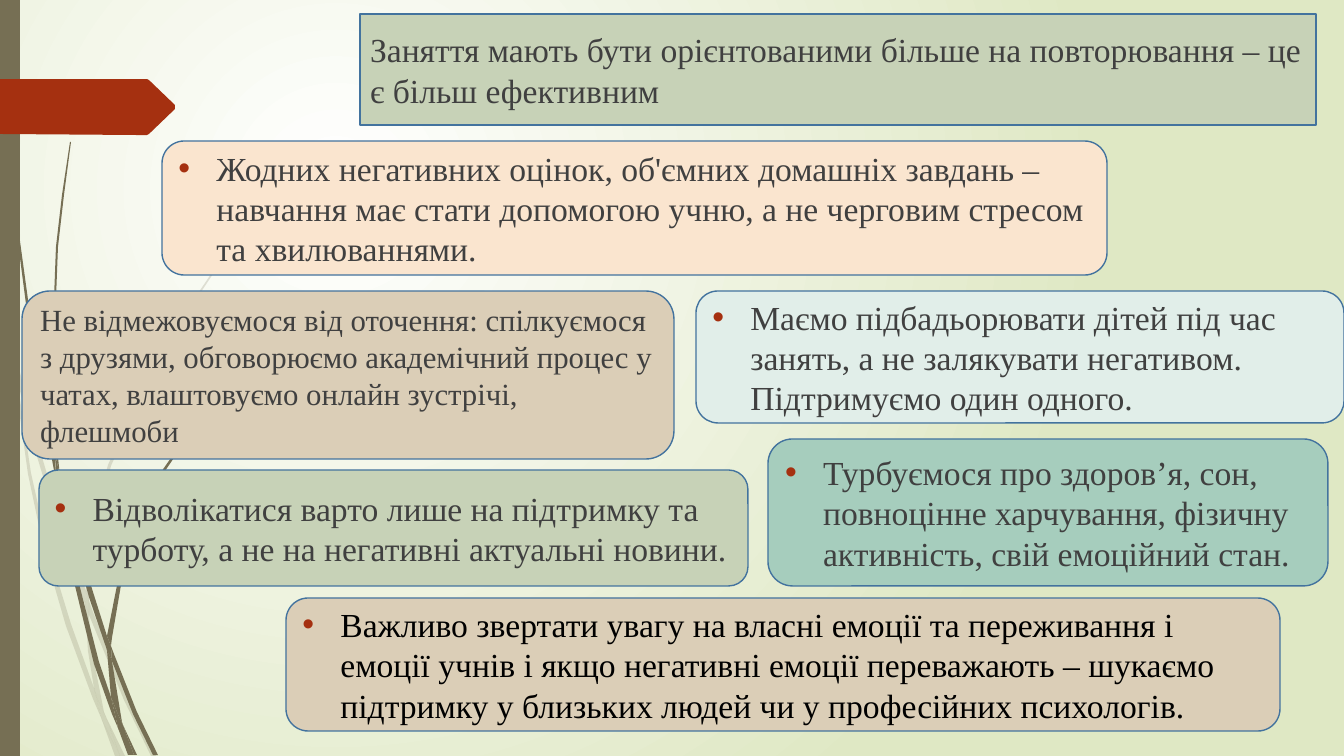
import lxml.etree
import pptx
import pptx.dml.color
import pptx.enum.dml
import pptx.enum.shapes
import pptx.enum.text
import pptx.oxml.ns
import pptx.util

SCALE = 12192000 / 1344
WIDTH, HEIGHT = 1344, 756
qn = pptx.oxml.ns.qn

PALE_WISPS = [
    [(11, 353), (9, 325), (0, 284), (0, 301), (10, 347)],
    [(58, 526), (85, 604), (86, 591), (62, 524), (36, 437), (14, 348), (17, 379), (36, 453)],
    [(93, 612), (89, 601), (89, 615), (124, 700), (151, 756), (156, 756), (128, 698)],
    [(120, 756), (125, 756), (106, 717)],
    [(94, 688), (71, 624), (48, 549), (31, 473), (17, 379), (11, 353), (28, 474),
     (44, 550), (66, 626), (93, 699), (102, 720), (100, 713)],
    [(85, 604), (88, 651), (94, 688), (97, 698), (106, 717), (104, 712), (92, 651),
     (89, 615), (89, 613)],
    [(89, 589), (96, 526), (111, 466), (161, 352), (231, 247), (270, 200), (292, 176),
     (314, 155), (314, 154), (291, 176), (270, 199), (230, 246), (159, 351), (108, 465),
     (92, 526), (86, 589), (86, 591), (89, 601)],
    [(102, 720), (115, 756), (120, 756)],
    [(89, 613), (89, 615), (89, 601), (86, 591), (85, 604)],
    [(97, 698), (94, 688), (100, 713), (102, 720), (120, 756), (106, 717)],
]
DARK_WISPS = [
    [(7, 111), (17, 235), (33, 358), (56, 481), (57, 485), (55, 461), (55, 457),
     (36, 358), (19, 234), (8, 110), (5, 48), (4, 0), (3, 0), (4, 48)],
    [(89, 597), (107, 650), (107, 638), (107, 636), (94, 595), (76, 537), (60, 476), (65, 509)],
    [(114, 654), (111, 646), (112, 661), (133, 714), (153, 755), (158, 755), (137, 712)],
    [(111, 697), (99, 662), (73, 560), (65, 509), (57, 481), (69, 561), (94, 664),
     (112, 714), (118, 728), (117, 723)],
    [(60, 476), (58, 457), (54, 352), (58, 247), (64, 195), (71, 142), (70, 142),
     (62, 195), (56, 247), (52, 352), (55, 453)],
    [(134, 755), (137, 755), (123, 725)],
    [(57, 481), (65, 509), (60, 476), (55, 453), (55, 457)],
    [(112, 638), (126, 556), (159, 480), (207, 409), (233, 377), (247, 362), (263, 347),
     (262, 347), (247, 361), (233, 376), (206, 408), (157, 478), (123, 555), (107, 636),
     (111, 646)],
    [(118, 728), (128, 755), (132, 755)],
    [(107, 650), (111, 697), (117, 712), (123, 725), (122, 722), (112, 661), (110, 656)],
    [(107, 650), (110, 656), (112, 661), (111, 646), (107, 636), (107, 638)],
    [(117, 712), (111, 697), (117, 723), (118, 728), (131, 755), (134, 755), (123, 725)],
]
TAG = [(175, 109), (149, 134), (147, 135), (137, 135), (0, 134), (0, 79), (147, 79),
       (149, 80), (175, 105)]

TITLE = "Заняття мають бути орієнтованими більше на повторювання – це є більш ефективним"
CARDS = [
    ((39, 470, 709, 116), "C7D2B7", {},
     "Відволікатися варто лише на підтримку та турботу, а не на негативні актуальні новини."),
    ((162, 141, 945, 134), "FAE5CF", {},
     "Жодних негативних оцінок, об'ємних домашніх завдань – навчання має стати допомогою "
     "учню, а не черговим стресом та хвилюваннями."),
    ((696, 291, 648, 132), "E1EEE9", {},
     "Маємо підбадьорювати дітей під час занять, а не залякувати негативом. "
     "Підтримуємо один одного."),
    ((286, 598, 994, 133), "DBCEB7", {"ink": "000000"},
     "Важливо звертати увагу на власні емоції та переживання і емоції учнів і якщо негативні "
     "емоції переважають – шукаємо підтримку у близьких людей чи у професійних психологів."),
    ((22, 291, 652, 168), "DBCEB7", {"size": 22, "bullet": False},
     "Не відмежовуємося від оточення: спілкуємося з друзями, обговорюємо академічний процес "
     "у чатах, влаштовуємо онлайн зустрічі, флешмоби"),
    ((768, 439, 560, 147), "A6CDBD", {},
     "Турбуємося про здоров’я, сон, повноцінне харчування, фізичну активність, "
     "свій емоційний стан."),
]


def px(value):
    return pptx.util.Emu(round(value * SCALE))


def colour(text):
    return pptx.dml.color.RGBColor.from_string(text)


def apply(target, values):
    for name, value in values.items():
        setattr(target, name, value)


class SlideBuilder:
    font = "Times New Roman"
    olive = "766F54"
    accent = "A53010"
    outline = "43739E"

    def __init__(self, page):
        self.page = page

    def background(self, inner, outer):
        fill = self.page.background.fill
        fill.gradient()
        for stop, position, shade in zip(fill.gradient_stops, (0, 1), (inner, outer)):
            apply(stop, {"position": position})
            stop.color.rgb = colour(shade)
        gradient = next(self.page._element.iter(qn("a:gradFill")))
        gradient.remove(gradient.find(qn("a:lin")))
        circle = lxml.etree.SubElement(gradient, qn("a:path"), path="circle")
        lxml.etree.SubElement(circle, qn("a:fillToRect"),
                              l="50000", t="50000", r="100000", b="100000")

    def paint(self, shape, fill, line=None):
        shape.fill.solid()
        shape.fill.fore_color.rgb = colour(fill)
        if line:
            shape.line.color.rgb = colour(line)
            shape.line.width = pptx.util.Pt(1)
        else:
            shape.line.fill.background()

    def preset(self, kind, place):
        shape = self.page.shapes.add_shape(kind, *map(px, place))
        shape.shadow.inherit = False
        return shape

    def bar(self, place):
        self.paint(self.preset(pptx.enum.shapes.MSO_SHAPE.RECTANGLE, place), self.olive)

    def outline_shape(self, points, fill, opacity=100):
        builder = self.page.shapes.build_freeform(*points[0], scale=SCALE)
        builder.add_line_segments(points[1:], close=True)
        shape = builder.convert_to_shape()
        shape.shadow.inherit = False
        self.paint(shape, fill)
        if opacity < 100:
            shade = shape._element.spPr.find(qn("a:solidFill"))[0]
            lxml.etree.SubElement(shade, qn("a:alpha"), val=str(opacity * 1000))

    def title(self, place, fill, text):
        box = self.page.shapes.title
        apply(box, dict(zip(("left", "top", "width", "height"), map(px, place))))
        geometry = lxml.etree.SubElement(box._element.spPr, qn("a:prstGeom"), prst="roundRect")
        lxml.etree.SubElement(geometry, qn("a:avLst"))
        self.fill_card(box, fill, text, bullet=False)

    def card(self, place, fill, text, **look):
        box = self.preset(pptx.enum.shapes.MSO_SHAPE.ROUNDED_RECTANGLE, place)
        self.fill_card(box, fill, text, **look)

    def fill_card(self, box, fill, text, size=24, ink="404040", bullet=True):
        self.paint(box, fill, self.outline)
        apply(box.text_frame, {"word_wrap": True,
                               "auto_size": pptx.enum.text.MSO_AUTO_SIZE.NONE,
                               "vertical_anchor": pptx.enum.text.MSO_ANCHOR.MIDDLE})
        para = box.text_frame.paragraphs[0]
        para.alignment = pptx.enum.text.PP_ALIGN.LEFT
        span = para.add_run()
        span.text = text
        apply(span.font, {"name": self.font, "size": pptx.util.Pt(size)})
        span.font.color.rgb = colour(ink)
        if bullet:
            self.bullet(para)

    def bullet(self, para):
        para.space_before = pptx.util.Pt(10)
        properties = para._p.get_or_add_pPr()
        properties.set("marL", str(px(38)))
        properties.set("indent", str(-px(38)))
        shade = lxml.etree.SubElement(properties, qn("a:buClr"))
        lxml.etree.SubElement(shade, qn("a:srgbClr"), val=self.accent)
        lxml.etree.SubElement(properties, qn("a:buFont"), typeface="Arial")
        lxml.etree.SubElement(properties, qn("a:buChar"), char="•")


def main():
    deck = pptx.Presentation()
    apply(deck, {"slide_width": px(WIDTH), "slide_height": px(HEIGHT)})
    slide = SlideBuilder(deck.slides.add_slide(deck.slide_layouts[5]))
    slide.background("FFFFFF", "DFE8C4")
    for wisps, opacity in ((PALE_WISPS, 20), (DARK_WISPS, 100)):
        for points in wisps:
            slide.outline_shape(points, slide.olive, opacity)
    slide.bar((0, 0, 20, HEIGHT))
    slide.outline_shape(TAG, slide.accent)
    slide.title((360, 14, 956, 111), "C7D2B7", TITLE)
    for place, fill, look, text in CARDS:
        slide.card(place, fill, text, **look)
    deck.save("out.pptx")


if __name__ == "__main__":
    main()
